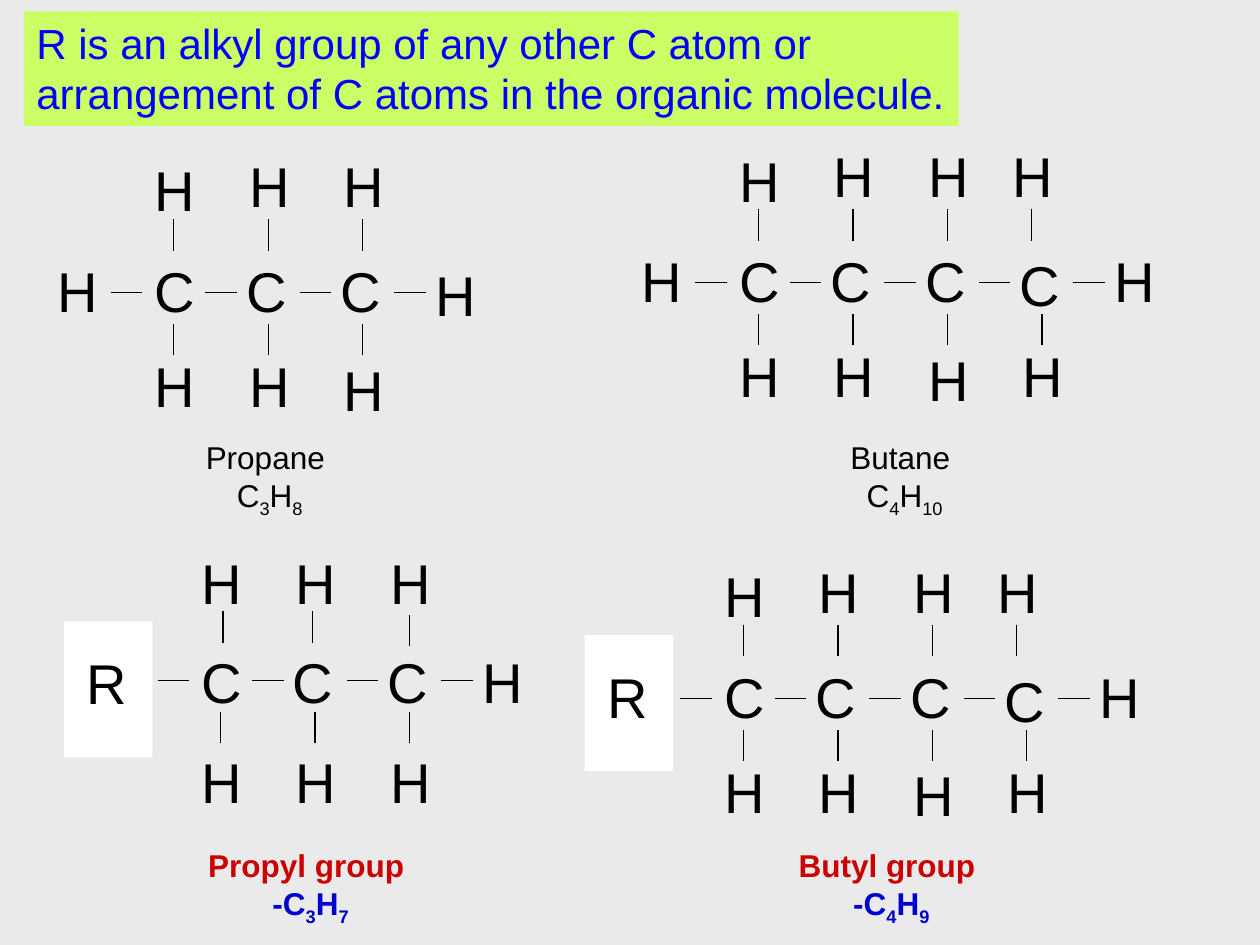
import pptx
import pptx.util
import pptx.dml.color
import pptx.enum.shapes
import pptx.enum.text
import pptx.oxml.ns
import lxml.etree

Pt = pptx.util.Pt
RGBColor = pptx.dml.color.RGBColor
RECTANGLE = pptx.enum.shapes.MSO_SHAPE.RECTANGLE

GREY = RGBColor(0xEA, 0xEA, 0xEA)
BLACK = RGBColor(0, 0, 0)
WHITE = RGBColor(0xFF, 0xFF, 0xFF)
LIME = RGBColor(0xCC, 0xFF, 0x66)
BLUE = RGBColor(0, 0, 0xFF)
NAVY = RGBColor(0, 0, 0xCC)
RED = RGBColor(0xCC, 0, 0)

PITCH = 54      # distance between neighbouring carbons
BOND = 18       # length of a bond
ATOM_W, ATOM_H = 37.5, 45.5


def add_run(paragraph, text, size, color, bold=False, subscript=False):
    run = paragraph.add_run()
    run.text = text
    run.font.name = "Arial"
    run.font.size = Pt(size)
    run.font.color.rgb = color
    run.font.bold = bold
    if subscript:
        run.font._element.set("baseline", "-25000")


def add_box(slide, left, top, width, height, fill=None, line=None):
    box = slide.shapes.add_shape(RECTANGLE, Pt(left), Pt(top), Pt(width), Pt(height))
    box.shadow.inherit = False
    if fill is None:
        box.fill.background()
    else:
        box.fill.solid()
        box.fill.fore_color.rgb = fill
    if line is None:
        box.line.fill.background()
    else:
        box.line.color.rgb = line
        box.line.width = Pt(0.75)
    frame = box.text_frame
    frame.word_wrap = True
    frame.vertical_anchor = pptx.enum.text.MSO_ANCHOR.TOP
    frame.paragraphs[0].alignment = pptx.enum.text.PP_ALIGN.LEFT
    return frame


def add_atom(slide, symbol, left, top):
    atom = slide.shapes.add_textbox(Pt(left), Pt(top), Pt(ATOM_W), Pt(ATOM_H))
    atom.text_frame.word_wrap = False
    add_run(atom.text_frame.paragraphs[0], symbol, 32, BLACK)


def add_bond(slide, x1, y1, x2, y2):
    bond = slide.shapes.add_connector(
        pptx.enum.shapes.MSO_CONNECTOR.STRAIGHT, Pt(x1), Pt(y1), Pt(x2), Pt(y2))
    bond.line.color.rgb = BLACK
    bond.line.width = Pt(0.75)
    lxml.etree.SubElement(bond._element.spPr, pptx.oxml.ns.qn("a:effectLst"))


def add_molecule(slide, left, top, upper, lower, upper_bonds, carbon_drops,
                 end_drop=0, axis=24, lower_bond=41.8, starts_with_h=True):
    """Carbon chain; left and top belong to the box of the first carbon.

    upper and upper_bonds hold (x, y) offsets, lower and carbon_drops y offsets.
    """
    count = len(carbon_drops)

    # Carbons and the bonds along the chain
    for i, drop in enumerate(carbon_drops):
        nudge = 1.7 if i else 0
        add_atom(slide, "C", left + i * PITCH - nudge, top + drop)
    for i in range(count + 1):
        start = left - BOND + i * PITCH
        add_bond(slide, start, top + axis, start + BOND, top + axis)

    # Hydrogens above and below
    for x, y in upper:
        add_atom(slide, "H", left + x, top + y)
    for x, y in upper_bonds:
        add_bond(slide, left + x, top + y, left + x, top + y - BOND)
    for i, y in enumerate(lower):
        x = left + i * PITCH
        add_atom(slide, "H", x, top + y)
        add_bond(slide, x + BOND, top + lower_bond + BOND, x + BOND, top + lower_bond)

    # Hydrogens at the ends
    add_atom(slide, "H", left + count * PITCH - 1.5, top + end_drop)
    if starts_with_h:
        add_atom(slide, "H", left - 55.8, top)


def add_r_card(slide, left, top):
    add_box(slide, left, top, 50.4, 77.8, fill=WHITE)
    label = add_box(slide, left + 5.8, top + 12, 36, 46, line=WHITE)
    add_run(label.paragraphs[0], "R", 32, BLACK)


def add_caption(slide, left, top, width, name, formula, name_color, formula_color, bold):
    caption = slide.shapes.add_textbox(Pt(left), Pt(top), Pt(width), Pt(50.4))
    frame = caption.text_frame
    frame.word_wrap = False
    title, formula_line = frame.paragraphs[0], frame.add_paragraph()
    for paragraph in (title, formula_line):
        paragraph.alignment = pptx.enum.text.PP_ALIGN.CENTER
    add_run(title, name, 18, name_color, bold)
    for part in formula:
        add_run(formula_line, part, 18, formula_color, bold, subscript=part.isdigit())


def add_headline(slide, left, top, width, height):
    frame = add_box(slide, left, top, width, height, fill=LIME)
    add_run(frame.paragraphs[0],
            "R is an alkyl group of any other C atom or arrangement "
            "of C atoms in the organic molecule.", 24, BLUE)


def main():
    deck = pptx.Presentation()
    deck.slide_width, deck.slide_height = Pt(720), Pt(540)
    slide = deck.slides.add_slide(deck.slide_layouts[6])
    slide.background.fill.solid()
    slide.background.fill.fore_color.rgb = GREY

    # Four-carbon chains: butane and the butyl group
    four_carbons = dict(
        upper=[(0, -57.6), (54, -60.2), (108, -60.2), (156, -60.2)],
        upper_bonds=[(18, 0), (72, 0), (126, 0), (174, 0)],
        lower=[54, 54, 56.2, 54],
        carbon_drops=[0, 0, 0, 2.2])
    add_molecule(slide, 415.4, 137.5, **four_carbons)
    add_molecule(slide, 406.8, 375.1, starts_with_h=False, **four_carbons)
    add_r_card(slide, 334.1, 362.9)

    # Three-carbon chains: propane and the propyl group
    add_molecule(
        slide, 81.3, 143.3,
        upper=[(0, -58.2), (54, -60.5), (108, -60.5)],
        upper_bonds=[(18, 0), (72, 0), (126, 0)],
        lower=[54, 54, 56.2], carbon_drops=[0, 0, 0], end_drop=2.2)
    add_molecule(
        slide, 108, 366.5,
        upper=[(0, -56.9), (54, -56.9), (108, -56.9)],
        upper_bonds=[(19.4, 0.7), (70.6, 0.7), (126, 2.9)],
        lower=[56.9, 56.9, 56.9], carbon_drops=[0, 0, 0],
        axis=22.3, lower_bond=40.3, starts_with_h=False)
    add_r_card(slide, 36.7, 355)

    # Names and formulas
    add_caption(slide, 110.2, 247, 87.8, "Propane ", ["C", "3", "H", "8"],
                BLACK, BLACK, False)
    add_caption(slide, 478.8, 247, 76.3, "Butane ", ["C", "4", "H", "10"],
                BLACK, BLACK, False)
    add_caption(slide, 111.6, 480.2, 131.8, "Propyl group ", ["-C", "3", "H", "7"],
                RED, NAVY, True)
    add_caption(slide, 449.3, 480.2, 120.2, "Butyl group ", ["-C", "4", "H", "9"],
                RED, NAVY, True)

    add_headline(slide, 13.7, 6.5, 534.2, 65.5)
    deck.save("out.pptx")


if __name__ == "__main__":
    main()
